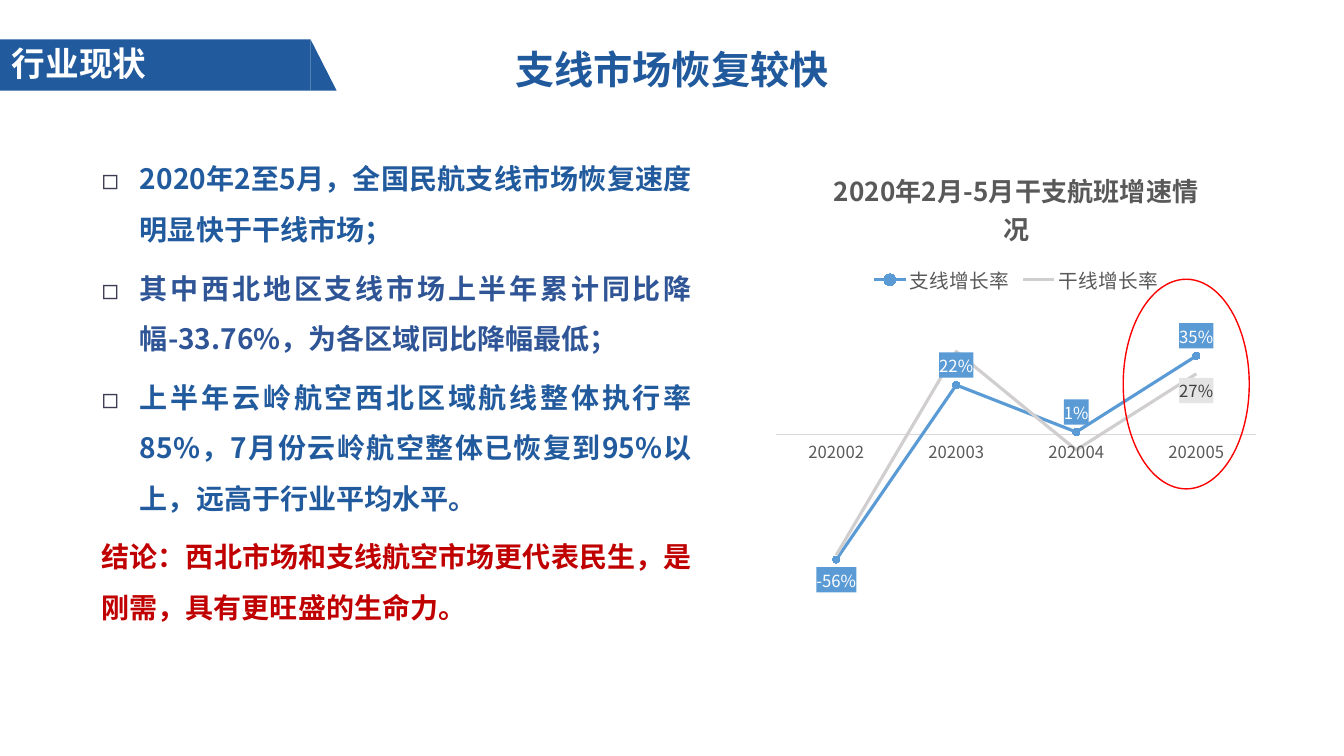
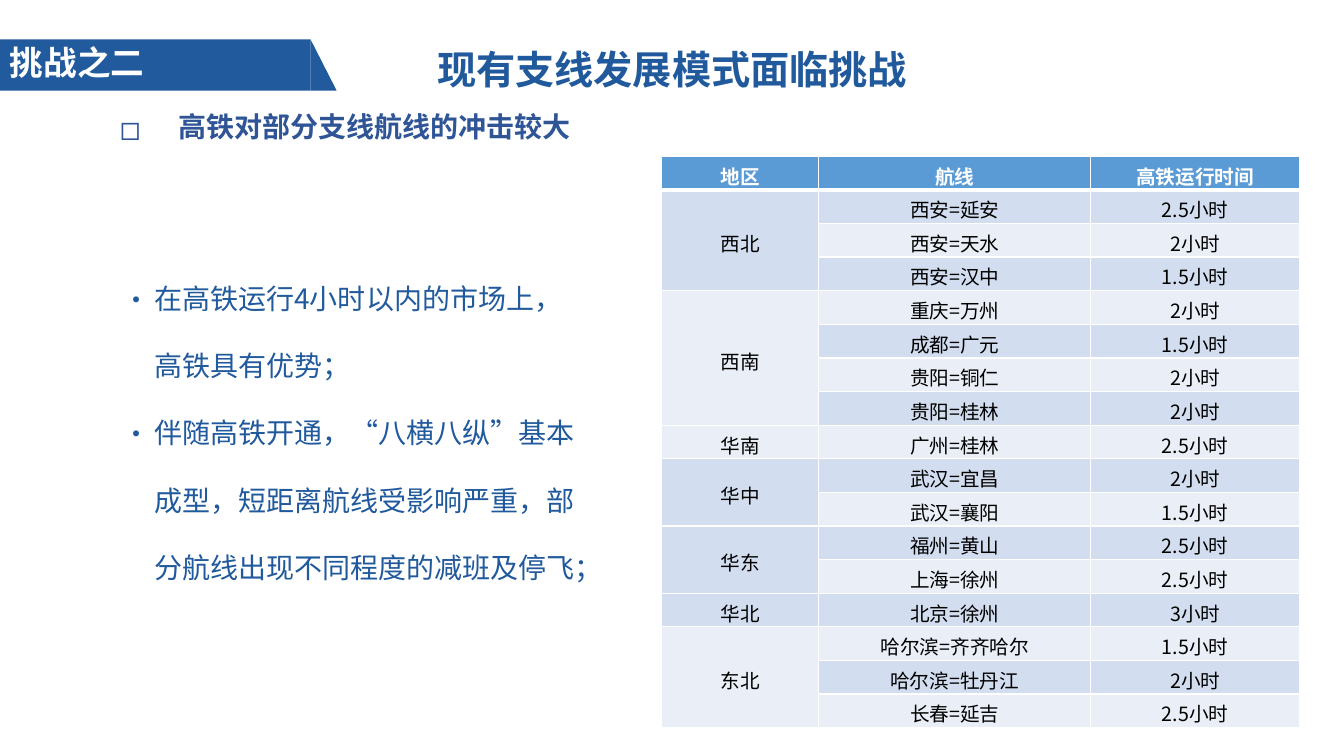
from lxml import etree
from pptx import Presentation
from pptx.chart.data import CategoryChartData
from pptx.dml.color import RGBColor
from pptx.enum.chart import (XL_CHART_TYPE, XL_LABEL_POSITION, XL_LEGEND_POSITION,
                             XL_MARKER_STYLE, XL_TICK_MARK)
from pptx.enum.shapes import MSO_SHAPE
from pptx.enum.text import MSO_ANCHOR, MSO_AUTO_SIZE, PP_ALIGN
from pptx.oxml import parse_xml
from pptx.oxml.ns import nsdecls, qn
from pptx.util import Inches, Pt

LINE_MARKERS = XL_CHART_TYPE.LINE_MARKERS
ABOVE, BELOW = XL_LABEL_POSITION.ABOVE, XL_LABEL_POSITION.BELOW
LEGEND_TOP = XL_LEGEND_POSITION.TOP
CIRCLE, NO_MARKER = XL_MARKER_STYLE.CIRCLE, XL_MARKER_STYLE.NONE
NO_TICK = XL_TICK_MARK.NONE
RECTANGLE, TRIANGLE, OVAL = MSO_SHAPE.RECTANGLE, MSO_SHAPE.RIGHT_TRIANGLE, MSO_SHAPE.OVAL
TOP, MIDDLE = MSO_ANCHOR.TOP, MSO_ANCHOR.MIDDLE
LEFT, CENTER, JUSTIFY = PP_ALIGN.LEFT, PP_ALIGN.CENTER, PP_ALIGN.JUSTIFY

FONT = "Noto Sans CJK SC"
BLUE = RGBColor(0x21, 0x5A, 0x9D)
TITLE_BLUE = RGBColor(0x20, 0x59, 0x9C)
INDIGO = RGBColor(0x2F, 0x55, 0x97)
SKY = RGBColor(0x5B, 0x9B, 0xD5)
PALE = RGBColor(0xD2, 0xDE, 0xEF)
PALER = RGBColor(0xEA, 0xEF, 0xF7)
SILVER = RGBColor(0xD0, 0xCE, 0xCE)
LABEL_GREY = RGBColor(0xE4, 0xE4, 0xE4)
AXIS_GREY = RGBColor(0xD9, 0xD9, 0xD9)
GREY = RGBColor(0x59, 0x59, 0x59)
DARK = RGBColor(0x40, 0x40, 0x40)
SLATE = RGBColor(0x3B, 0x3C, 0x51)
CRIMSON = RGBColor(0xC0, 0x00, 0x00)
RED = RGBColor(0xFF, 0x00, 0x00)
BLACK = RGBColor(0, 0, 0)
WHITE = RGBColor(0xFF, 0xFF, 0xFF)

FINDINGS = [
    ("2020年2至5月，全国民航支线市场恢复速度明显快于干线市场；", BLUE),
    ("其中西北地区支线市场上半年累计同比降幅-33.76%，为各区域同比降幅最低；", INDIGO),
    ("上半年云岭航空西北区域航线整体执行率85%，7月份云岭航空整体已恢复到95%以上，远高于行业平均水平。", BLUE),
]
CONCLUSION = "结论：西北市场和支线航空市场更代表民生，是刚需，具有更旺盛的生命力。"

CHART_TITLE = "2020年2月-5月干支航班增速情况"
MONTHS = ["202002", "202003", "202004", "202005"]
GROWTH = [
    {"name": "支线增长率", "values": (-0.56, 0.22, 0.01, 0.35), "color": SKY, "marker": CIRCLE,
     "labels": {0: BELOW, 1: ABOVE, 2: ABOVE, 3: ABOVE}, "label_fill": SKY, "label_color": WHITE},
    {"name": "干线增长率", "values": (-0.54, 0.37, -0.07, 0.27), "color": SILVER, "marker": NO_MARKER,
     "labels": {3: BELOW}, "label_fill": LABEL_GREY, "label_color": DARK},
]

RAIL_HEADING = "高铁对部分支线航线的冲击较大"
RAIL_POINTS = [
    ("在高铁运行4小时以内的市场上，高铁具有优势；", BLUE),
    ("伴随高铁开通，“八横八纵”基本成型，短距离航线受影响严重，部分航线出现不同程度的减班及停飞；", TITLE_BLUE),
]
HEADER = ("地区", "航线", "高铁运行时间")
REGIONS = [
    ("西北", [("西安=延安", "2.5小时"), ("西安=天水", "2小时"), ("西安=汉中", "1.5小时")]),
    ("西南", [("重庆=万州", "2小时"), ("成都=广元", "1.5小时"),
            ("贵阳=铜仁", "2小时"), ("贵阳=桂林", "2小时")]),
    ("华南", [("广州=桂林", "2.5小时")]),
    ("华中", [("武汉=宜昌", "2小时"), ("武汉=襄阳", "1.5小时")]),
    ("华东", [("福州=黄山", "2.5小时"), ("上海=徐州", "2.5小时")]),
    ("华北", [("北京=徐州", "3小时")]),
    ("东北", [("哈尔滨=齐齐哈尔", "1.5小时"), ("哈尔滨=牡丹江", "2小时"), ("长春=延吉", "2.5小时")]),
]
COLUMN_WIDTHS = (1.56, 2.7, 2.07)
TABLE_LEFT, TABLE_TOP, TABLE_HEIGHT = 6.56, 1.55, 5.67


def inches(*lengths):
    return [Inches(length) for length in lengths]


def add_bullet(para, char, color, hang, left, percent=100):
    """Give the paragraph a bullet that hangs to the left of its text."""
    props = para._p.get_or_add_pPr()
    props.set("marL", str(Inches(left)))
    props.set("indent", str(-Inches(hang)))
    for xml in (f'<a:buClr {nsdecls("a")}><a:srgbClr val="{color}"/></a:buClr>',
                f'<a:buSzPct {nsdecls("a")} val="{percent * 1000}"/>',
                f'<a:buFont {nsdecls("a")} typeface="{FONT}"/>',
                f'<a:buChar {nsdecls("a")} char="{char}"/>'):
        props.append(parse_xml(xml))


def write(frame, text, size=20, color=BLUE, bold=False, align=LEFT, spacing=None,
          before=0, bullet=None):
    """Fill the first empty paragraph of the frame, or add one after the others."""
    first = not frame.paragraphs[0].runs
    para = frame.paragraphs[0] if first else frame.add_paragraph()
    para.alignment = align
    if spacing:
        para.line_spacing = spacing
    if before and not first:
        para.space_before = Pt(before)
    if bullet:
        add_bullet(para, **bullet)
    span = para.add_run()
    span.text = text
    span.font.size, span.font.bold, span.font.name = Pt(size), bold, FONT
    span.font.color.rgb = color
    etree.SubElement(span._r.get_or_add_rPr(), qn("a:ea")).set("typeface", FONT)


def add_box(page, area, anchor=TOP):
    frame = page.shapes.add_textbox(*inches(*area)).text_frame
    frame.word_wrap = True
    frame.vertical_anchor = anchor
    return frame


def add_page(deck, title, section, section_area):
    """Add a slide with the section band at left and the centred title."""
    page = deck.slides.add_slide(deck.slide_layouts[5])
    for kind, area in ((RECTANGLE, (0, 0.39, 3.08, 0.51)), (TRIANGLE, (3.08, 0.39, 0.26, 0.51))):
        band = page.shapes.add_shape(kind, *inches(*area))
        band.shadow.inherit = False
        band.fill.solid()
        band.fill.fore_color.rgb = BLUE
        band.line.fill.background()
    write(add_box(page, section_area), section, size=24, color=WHITE, bold=True)
    heading = page.shapes.title
    heading.left, heading.top, heading.width, heading.height = inches(4.1, 0.31, 5.13, 0.66)
    frame = heading.text_frame
    frame.auto_size = MSO_AUTO_SIZE.NONE
    frame.vertical_anchor = MIDDLE
    write(frame, title, size=28, color=TITLE_BLUE, bold=True, align=CENTER, spacing=1.2)
    return page


def set_font(font, size, color):
    font.size, font.name, font.bold = Pt(size), FONT, False
    font.color.rgb = color


def style_series(series, style):
    series.smooth = False
    series.format.line.color.rgb = style["color"]
    series.format.line.width = Pt(2.25)
    series.marker.style = style["marker"]
    if style["marker"] == CIRCLE:
        series.marker.size = 5
        series.marker.format.fill.solid()
        series.marker.format.fill.fore_color.rgb = style["color"]
        series.marker.format.line.color.rgb = style["color"]
    series.data_labels.show_value = False
    for index, position in style["labels"].items():
        label = series.points[index].data_label
        set_font(label.font, 11.9, style["label_color"])
        label.position = position
        text_props = label._get_or_add_dLbl().find(qn("c:txPr"))
        text_props.addprevious(parse_xml(
            f'<c:spPr {nsdecls("c", "a")}><a:solidFill><a:srgbClr val="{style["label_fill"]}"/>'
            '</a:solidFill></c:spPr>'))


def place_plot(chart, **shares):
    """Fix the inner plot area as shares of the chart's size."""
    plot_area = chart._chartSpace.chart.plotArea
    for old in plot_area.findall(qn("c:layout")):
        plot_area.remove(old)
    parts = "".join(f'<c:{key} val="{share}"/>' for key, share in shares.items())
    plot_area.insert(0, parse_xml(
        f'<c:layout {nsdecls("c")}><c:manualLayout><c:layoutTarget val="inner"/>'
        f'<c:xMode val="edge"/><c:yMode val="edge"/>{parts}</c:manualLayout></c:layout>'))


def add_growth_chart(page):
    data = CategoryChartData(number_format="0%")
    data.categories = MONTHS
    for style in GROWTH:
        data.add_series(style["name"], style["values"])
    chart = page.shapes.add_chart(LINE_MARKERS, *inches(7.6, 1.47, 4.96, 4.71), data).chart
    set_font(chart.font, 10, BLACK)
    chart.has_title = True
    write(chart.chart_title.text_frame, CHART_TITLE, size=18.6, color=GREY, bold=True, align=CENTER)
    chart.chart_title.include_in_layout = False
    chart.has_legend = True
    chart.legend.position = LEGEND_TOP
    chart.legend.include_in_layout = False
    set_font(chart.legend.font, 14, GREY)
    months, rates = chart.category_axis, chart.value_axis
    months.major_tick_mark = months.minor_tick_mark = NO_TICK
    months.format.line.color.rgb = AXIS_GREY
    months.format.line.width = Pt(0.75)
    set_font(months.tick_labels.font, 11.9, GREY)
    rates.minimum_scale, rates.maximum_scale = -0.8, 0.6
    rates.has_major_gridlines = False
    rates.visible = False
    chart.plots[0].vary_by_categories = False
    for series, style in zip(chart.plots[0].series, GROWTH):
        style_series(series, style)
    place_plot(chart, x=0.02, y=0.32, w=0.96, h=0.66)


def style_cell(cell, text, fill, color=BLACK, bold=False, top=1, bottom=1):
    cell.fill.solid()
    cell.fill.fore_color.rgb = fill
    cell.vertical_anchor = MIDDLE
    cell.margin_top, cell.margin_bottom = Inches(0.05), 0
    if text:
        write(cell.text_frame, text, size=14, color=color, bold=bold, align=CENTER)
    props = cell._tc.get_or_add_tcPr()
    for place, (side, width) in enumerate(zip("LRTB", (1, 1, top, bottom))):
        props.insert(place, parse_xml(
            f'<a:ln{side} {nsdecls("a")} w="{Pt(width)}"><a:solidFill>'
            f'<a:srgbClr val="{WHITE}"/></a:solidFill></a:ln{side}>'))


def add_route_table(page):
    rows = [(region if not place else "", *route)
            for region, routes in REGIONS for place, route in enumerate(routes)]
    count = len(rows) + 1
    table = page.shapes.add_table(count, len(HEADER), *inches(
        TABLE_LEFT, TABLE_TOP, sum(COLUMN_WIDTHS), TABLE_HEIGHT)).table
    for column, width in zip(table.columns, COLUMN_WIDTHS):
        column.width = Inches(width)
    for row in table.rows:
        row.height = Inches(TABLE_HEIGHT / count)
    for column, text in enumerate(HEADER):
        style_cell(table.cell(0, column), text, SKY, color=WHITE, bold=True, bottom=3)
    for row, texts in enumerate(rows, 1):
        for column, text in enumerate(texts):
            style_cell(table.cell(row, column), text, PALE if row % 2 else PALER,
                       top=3 if row == 1 else 1)
    start = 1
    for _, routes in REGIONS:
        if len(routes) > 1:
            table.cell(start, 0).merge(table.cell(start + len(routes) - 1, 0))
        start += len(routes)


def build_recovery(deck):
    page = add_page(deck, "支线市场恢复较快", "行业现状", (0.02, 0.38, 2.43, 0.5))
    frame = add_box(page, (0.91, 1.39, 6.05, 4.9))
    layout = {"bold": True, "align": JUSTIFY, "spacing": 1.5, "before": 6}
    square = {"char": "◻", "color": SLATE, "hang": 0.38, "left": 0.38}
    for text, color in FINDINGS:
        write(frame, text, color=color, bullet=square, **layout)
    write(frame, CONCLUSION, color=CRIMSON, **layout)
    add_growth_chart(page)
    ring = page.shapes.add_shape(OVAL, *inches(11.14, 2.77, 1.25, 2.08))
    ring.shadow.inherit = False
    ring.fill.background()
    ring.line.color.rgb = RED
    ring.line.width = Pt(1)


def build_rail_challenge(deck):
    page = add_page(deck, "现有支线发展模式面临挑战", "挑战之二", (0, 0.37, 2.38, 0.5))
    write(add_box(page, (1.09, 0.97, 10.35, 0.57), MIDDLE), RAIL_HEADING, color=INDIGO, bold=True,
          bullet={"char": "◻", "color": INDIGO, "hang": 0.58, "left": 0.58, "percent": 120})
    frame = add_box(page, (0.62, 2.41, 5.26, 3.47))
    for text, color in RAIL_POINTS:
        write(frame, text, color=color, spacing=2.0,
              bullet={"char": "•", "color": color, "hang": 0.31, "left": 0.81})
    add_route_table(page)


def main():
    deck = Presentation()
    deck.slide_width, deck.slide_height = inches(13.33, 7.5)
    build_recovery(deck)
    build_rail_challenge(deck)
    deck.save("out.pptx")


if __name__ == "__main__":
    main()
